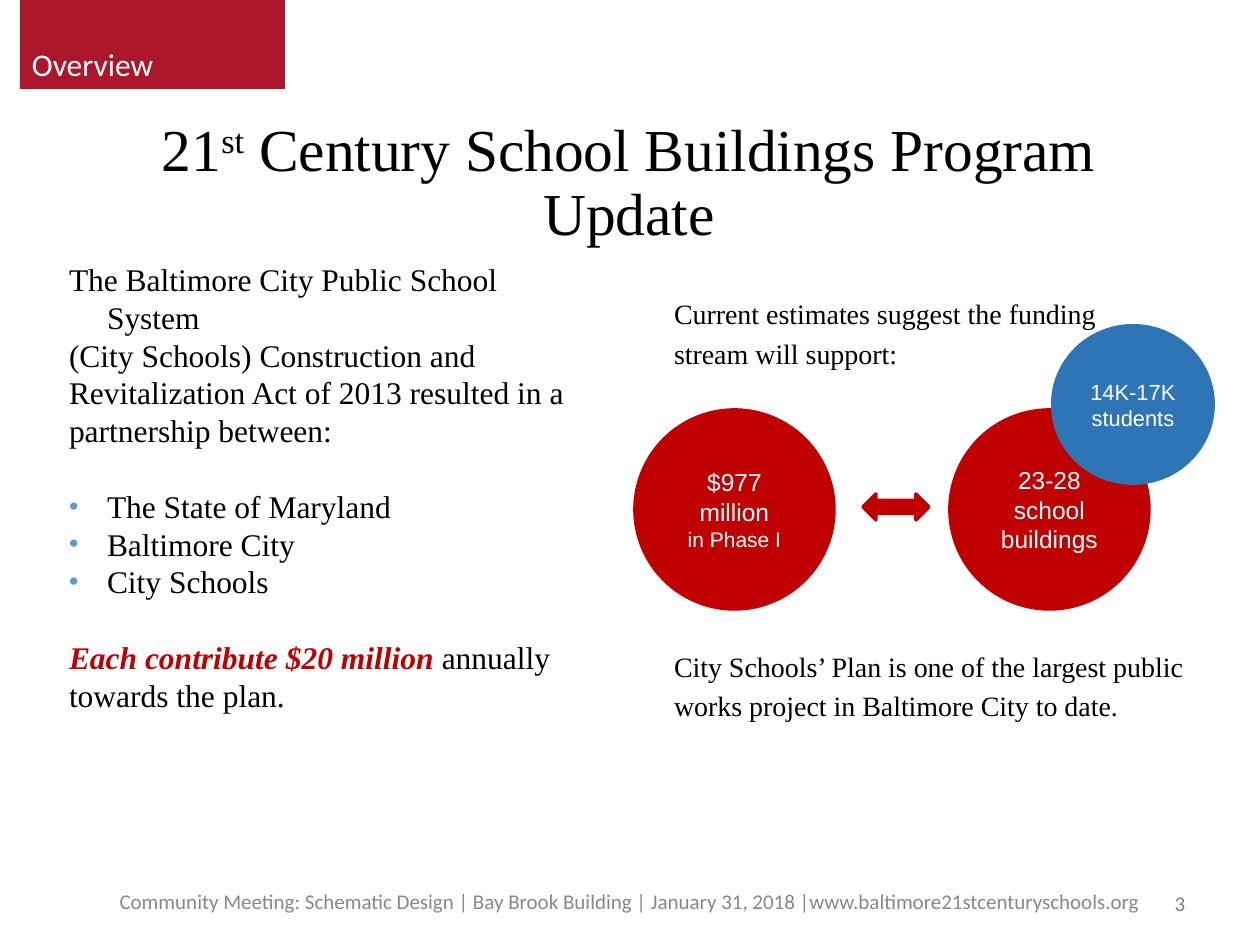
from lxml import etree
from pptx import Presentation
from pptx import util as u
from pptx.dml.color import RGBColor
from pptx.enum import shapes, text
from pptx.oxml.ns import qn

PX = 914400 // 126
COLORS = {"banner": "AC172B", "red": "C00000", "blue": "2E75B6", "bullet": "5B9BD5",
          "black": "000000", "white": "FFFFFF", "page": "808080", "footer": "888888"}
SERIF, SANS, LABEL = "Times New Roman", "Arial", "Calibri"
CENTER, LEFT = text.PP_ALIGN.CENTER, text.PP_ALIGN.LEFT
TOP, MIDDLE, BOTTOM = (text.MSO_ANCHOR.TOP, text.MSO_ANCHOR.MIDDLE,
                       text.MSO_ANCHOR.BOTTOM)
HANGING = 38


def color(name):
    return RGBColor.from_string(COLORS[name])


class SlideBuilder:
    def __init__(self, prs):
        self.slide = prs.slides.add_slide(prs.slide_layouts[3])

    def frame(self, shape, anchor, inset=(12, 6)):
        frame = shape.text_frame
        frame.word_wrap = True
        frame.auto_size = text.MSO_AUTO_SIZE.NONE
        frame.vertical_anchor = anchor
        frame.margin_left = frame.margin_right = inset[0] * PX
        frame.margin_top = frame.margin_bottom = inset[1] * PX
        return frame

    def paragraph(self, frame, first, align, before=0):
        para = frame.paragraphs[0] if first else frame.add_paragraph()
        para.alignment = align
        para.space_before = u.Pt(before)
        return para

    def run(self, para, words, size, font, tint, strong=False, raised=False):
        run = para.add_run()
        run.text = words
        run.font.size, run.font.name = u.Pt(size), font
        run.font.bold = run.font.italic = strong
        run.font.color.rgb = color(tint)
        if raised:
            run._r.get_or_add_rPr().set("baseline", "30000")

    def place(self, shape, box):
        shape.left, shape.top, shape.width, shape.height = (n * PX for n in box)

    def title(self, box, runs, size):
        """Fill the title from (words, raised) pairs."""
        shape = self.slide.shapes.title
        self.place(shape, box)
        para = self.paragraph(self.frame(shape, MIDDLE, (13, 13)), True, CENTER)
        para.line_spacing = 0.9
        for words, raised in runs:
            self.run(para, words, size, SERIF, "black", raised=raised)

    def hanging(self, para, bulleted):
        props = para._p.get_or_add_pPr()
        props.set("marL", str(HANGING * PX))
        props.set("indent", str(-HANGING * PX))
        if not bulleted:
            etree.SubElement(props, qn("a:buNone"))
            return
        tint = etree.SubElement(props, qn("a:buClr"))
        etree.SubElement(tint, qn("a:srgbClr")).set("val", COLORS["bullet"])
        etree.SubElement(props, qn("a:buSzPct")).set("val", "85000")
        etree.SubElement(props, qn("a:buFont")).set("typeface", "Arial")
        etree.SubElement(props, qn("a:buChar")).set("char", "•")

    def body(self, index, box, lines, size):
        """Fill a body from (space before, bulleted, strong words, plain words)."""
        shape = self.slide.placeholders[index]
        self.place(shape, box)
        frame = self.frame(shape, TOP)
        for i, (before, bulleted, strong, plain) in enumerate(lines):
            para = self.paragraph(frame, i == 0, LEFT, before)
            self.hanging(para, bulleted)
            if strong:
                self.run(para, strong, size, SERIF, "red", strong=True)
            self.run(para, plain, size, SERIF, "black")

    def shape(self, kind, box, fill, lines=(), font=SANS, outline=False,
              align=CENTER, anchor=MIDDLE):
        """Draw a filled shape holding (words, size) lines."""
        shape = self.slide.shapes.add_shape(kind, *(n * PX for n in box))
        shape.shadow.inherit = False
        shape.fill.solid()
        shape.fill.fore_color.rgb = color(fill)
        if outline:
            shape.line.color.rgb = color(fill)
            shape.line.width = u.Pt(2)
        else:
            shape.line.fill.background()
        frame = self.frame(shape, anchor)
        for i, (words, size) in enumerate(lines):
            self.run(self.paragraph(frame, i == 0, align), words, size, font, "white")

    def label(self, box, words, tint):
        shape = self.slide.shapes.add_textbox(*(n * PX for n in box))
        para = self.paragraph(self.frame(shape, MIDDLE, (13, 13)), True, CENTER)
        self.run(para, words, 12, LABEL, tint)


def main():
    prs = Presentation()
    prs.slide_width, prs.slide_height = u.Inches(10), u.Inches(7.5)
    page = SlideBuilder(prs)
    kinds = shapes.MSO_SHAPE

    page.shape(kinds.RECTANGLE, (20, 0, 265, 89), "banner", [("Overview", 18)],
               font=LABEL, align=LEFT, anchor=BOTTOM)
    page.title((57, 92, 1144, 184), [("21", False), ("st", True),
               (" Century School Buildings Program Update", False)], 34)
    page.body(1, (57, 254, 546, 476), [
        (0, False, "", "The Baltimore City Public School System"),
        (0, False, "", "(City Schools) Construction and"),
        (0, False, "", "Revitalization Act of 2013 resulted in a"),
        (0, False, "", "partnership between:"),
        (21.6, True, "", "The State of Maryland"),
        (0, True, "", "Baltimore City"),
        (0, True, "", "City Schools"),
        (21.6, False, "Each contribute $20 million ", "annually"),
        (0, False, "", "towards the plan."),
    ], 18)
    page.body(2, (662, 291, 546, 450), [
        (0, False, "", "Current estimates suggest the funding"),
        (3.2, False, "", "stream will support:"),
        (160, False, "", "City Schools’ Plan is one of the largest public"),
        (3.2, False, "", "works project in Baltimore City to date."),
    ], 16)

    red_circles = [(635, [("$977 million", 14), ("in Phase I", 12)]),
                   (950, [("23-28 school buildings", 14)])]
    for left, lines in red_circles:
        page.shape(kinds.OVAL, (left, 410, 199, 199), "red", lines, outline=True)
    page.shape(kinds.LEFT_RIGHT_ARROW, (863, 494, 66, 26), "red", outline=True)
    page.shape(kinds.OVAL, (1051, 324, 164, 161), "blue",
               [("14K-17K", 12.5), ("students", 12.5)])

    page.label((1159, 876, 42, 55), "3", "page")
    page.label((87, 876, 1086, 50), "Community Meeting: Schematic Design | Bay Brook Building"
               " | January 31, 2018 |www.baltimore21stcenturyschools.org", "footer")
    prs.save("out.pptx")


if __name__ == "__main__":
    main()
